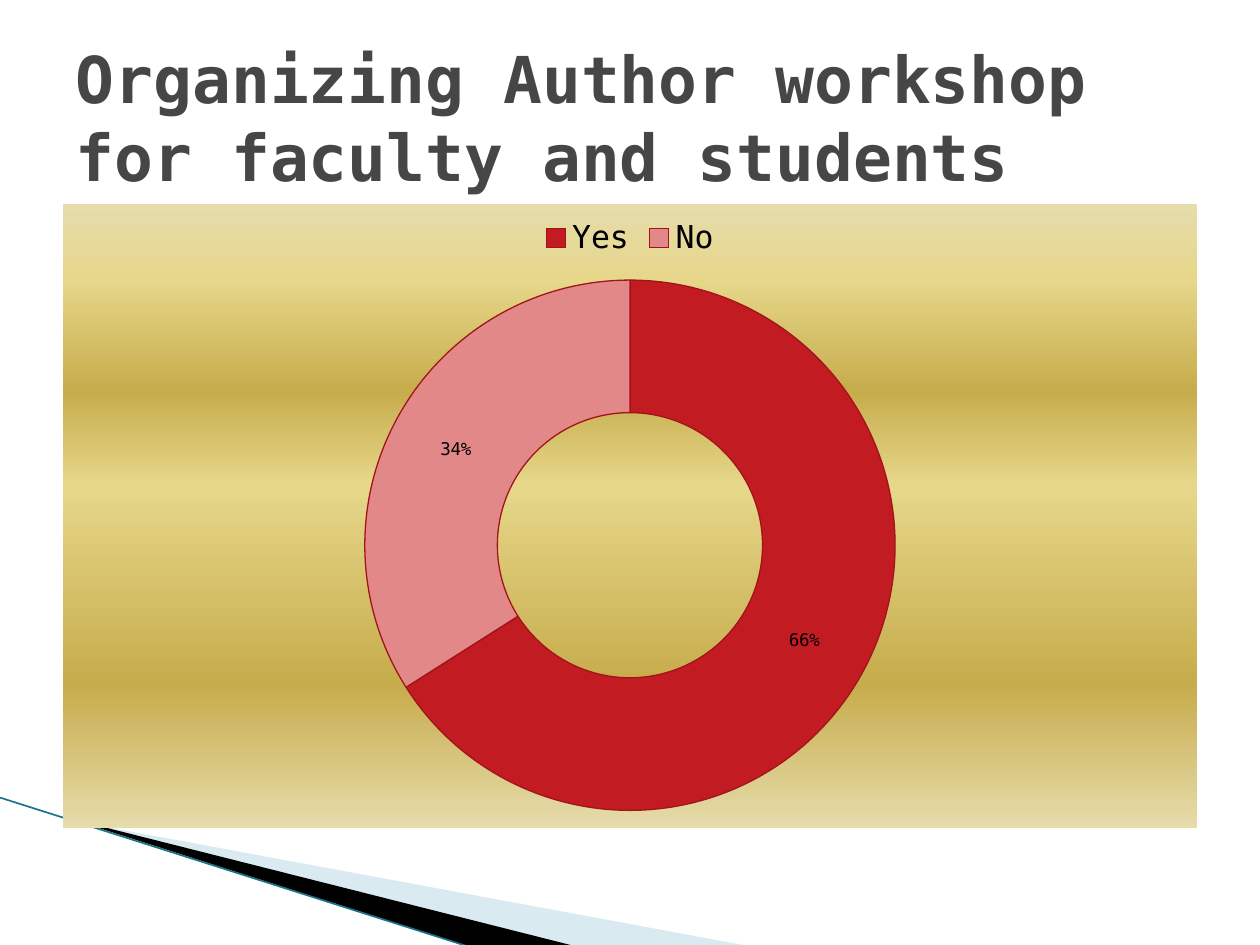
from lxml import etree
from pptx import Presentation
from pptx.chart.data import CategoryChartData
from pptx.dml.color import RGBColor
from pptx.enum.chart import XL_CHART_TYPE, XL_LEGEND_POSITION
from pptx.enum.shapes import MSO_CONNECTOR
from pptx.enum.text import MSO_ANCHOR, MSO_AUTO_SIZE, PP_ALIGN
from pptx.oxml import parse_xml
from pptx.oxml.ns import nsdecls, qn
from pptx.util import Inches, Pt

FONT = "DejaVu Sans Mono"
GOLD = [(0, "E6DCAC"), (12, "E6D78A"), (30, "C7AC4C"),
        (45, "E6D78A"), (77, "C7AC4C"), (100, "E6DCAC")]
ANSWERS = {"Yes": (66, "C21B22"), "No": (34, "E28888")}


def rgb(value):
    return RGBColor.from_string(value)


def style_font(font, **values):
    color = values.pop("color")
    for name, value in values.items():
        setattr(font, name, value)
    font.color.rgb = rgb(color)


def add_wedge(s, points, color, alpha=100):
    points = [(Inches(x), Inches(y)) for x, y in points]
    builder = s.shapes.build_freeform(*points[0])
    builder.add_line_segments(points[1:], close=True)
    sp = builder.convert_to_shape()
    sp.shadow.inherit = False
    sp.fill.solid()
    sp.fill.fore_color.rgb = rgb(color)
    sp.line.fill.background()
    if alpha < 100:
        clr = sp.fill._xPr.find(".//" + qn("a:srgbClr"))
        etree.SubElement(clr, qn("a:alpha")).set("val", str(alpha * 1000))


def add_corner(s, left, top, width, height):
    right, bottom = left + width, top + height
    # Pale and black wedges
    add_wedge(s, [(left + 0.55, top + 0.18), (right, bottom),
                  (left + 4.56, bottom)], "A0CBDC", 40)
    add_wedge(s, [(left + 0.53, top + 0.16), (left + 4.57, bottom),
                  (left + 3.72, bottom)], "000000")
    # Edge line
    line = s.shapes.add_connector(
        MSO_CONNECTOR.STRAIGHT, Inches(left), Inches(top),
        Inches(left + 3.71), Inches(bottom))
    line.line.color.rgb = rgb("1B7388")
    line.line.width = Pt(0.95)
    etree.SubElement(line._element.spPr, qn("a:effectLst"))


def fill_chart_area(chart, stops):
    gs = "".join(f'<a:gs pos="{pos * 1000}"><a:srgbClr val="{color}"/></a:gs>'
                 for pos, color in stops)
    sp_pr = parse_xml(
        f'<c:spPr {nsdecls("c", "a")}><a:gradFill><a:gsLst>{gs}</a:gsLst>'
        '<a:lin ang="5400000" scaled="0"/></a:gradFill>'
        '<a:ln><a:noFill/></a:ln></c:spPr>')
    chart._chartSpace.find(qn("c:chart")).addnext(sp_pr)


def add_doughnut(s, left, top, width, height):
    data = CategoryChartData()
    data.categories = list(ANSWERS)
    data.add_series("Series 1", [value for value, _ in ANSWERS.values()])
    chart = s.shapes.add_chart(
        XL_CHART_TYPE.DOUGHNUT, Inches(left), Inches(top),
        Inches(width), Inches(height), data).chart
    chart.has_title = False
    style_font(chart.font, name=FONT, size=Pt(10), color="000000")
    fill_chart_area(chart, GOLD)

    # Legend
    chart.has_legend = True
    chart.legend.position = XL_LEGEND_POSITION.TOP
    chart.legend.include_in_layout = False
    style_font(chart.legend.font, name=FONT, size=Pt(18), color="000000")

    # Ring and percentages
    plot = chart.plots[0]
    plot.vary_by_categories = True
    plot._element.find(qn("c:holeSize")).set("val", "50")
    for i, (_, color) in enumerate(ANSWERS.values()):
        fmt = plot.series[0].points[i].format
        fmt.fill.solid()
        fmt.fill.fore_color.rgb = rgb(color)
        fmt.line.color.rgb = rgb("A0141A")
        fmt.line.width = Pt(0.75)
    plot.has_data_labels = True
    labels = plot.data_labels
    labels.show_percentage = True
    labels.show_value = False
    labels.number_format = "0%"
    labels.number_format_is_linked = False
    style_font(labels.font, name=FONT, size=Pt(10), color="000000")


def set_title(s, text, left, top, width, height):
    title = s.shapes.title
    box = dict(left=left, top=top, width=width, height=height)
    for name, value in box.items():
        setattr(title, name, Inches(value))
    tf = title.text_frame
    tf.word_wrap = True
    tf.auto_size = MSO_AUTO_SIZE.NONE
    tf.vertical_anchor = MSO_ANCHOR.MIDDLE
    p = tf.paragraphs[0]
    p.alignment = PP_ALIGN.LEFT
    r = p.add_run()
    r.text = text
    style_font(r.font, name=FONT, size=Pt(36.9), bold=True, color="464646")


def main():
    prs = Presentation()
    prs.slide_width, prs.slide_height = Inches(10), Inches(7.5)
    s = prs.slides.add_slide(prs.slide_layouts[5])
    add_corner(s, 0, 6.33, 5.95, 1.18)
    add_doughnut(s, 0.5, 1.62, 9, 4.95)
    set_title(s, "Organizing Author workshop for faculty and students",
              0.5, 0.3, 9, 1.25)
    prs.save("out.pptx")


if __name__ == "__main__":
    main()
